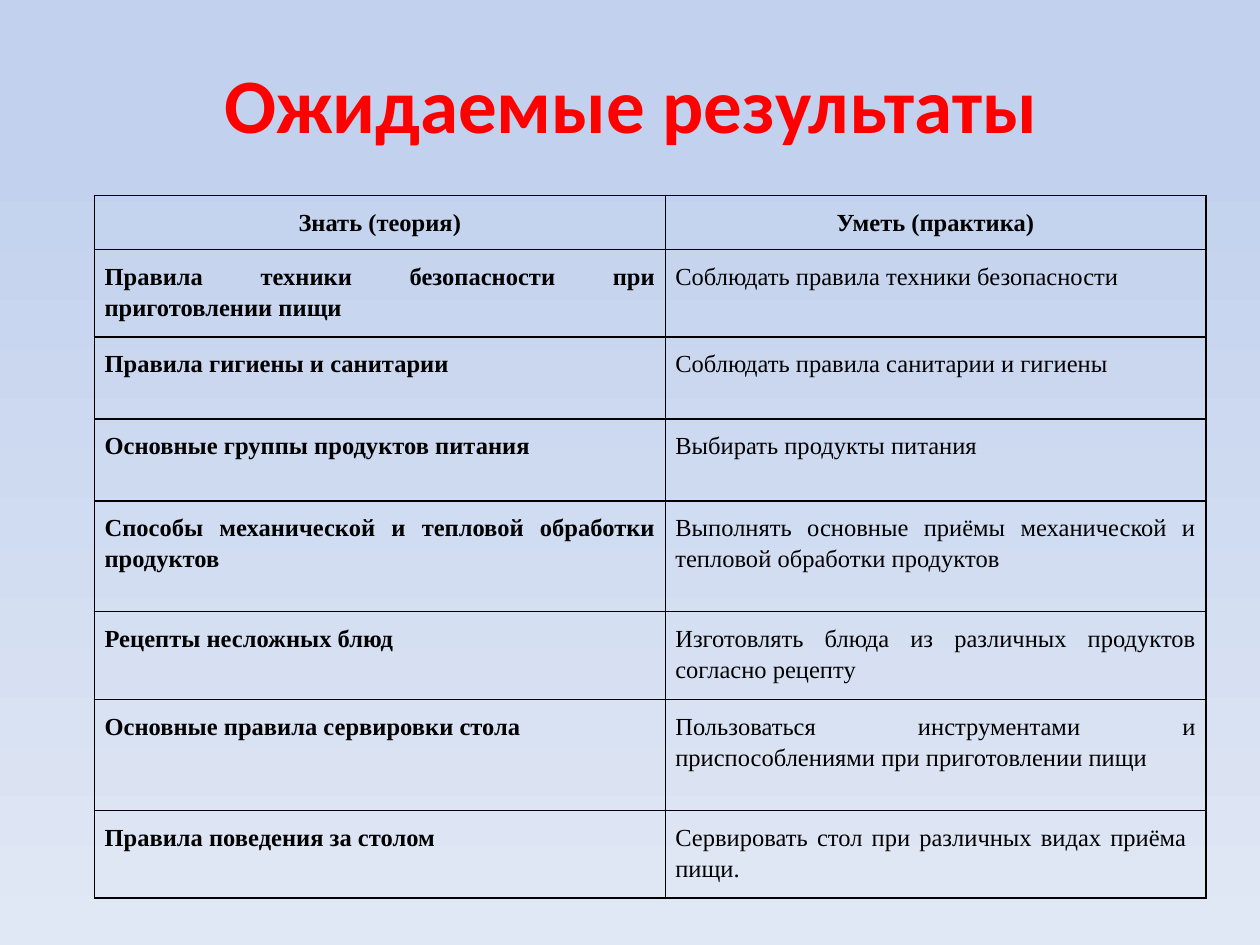
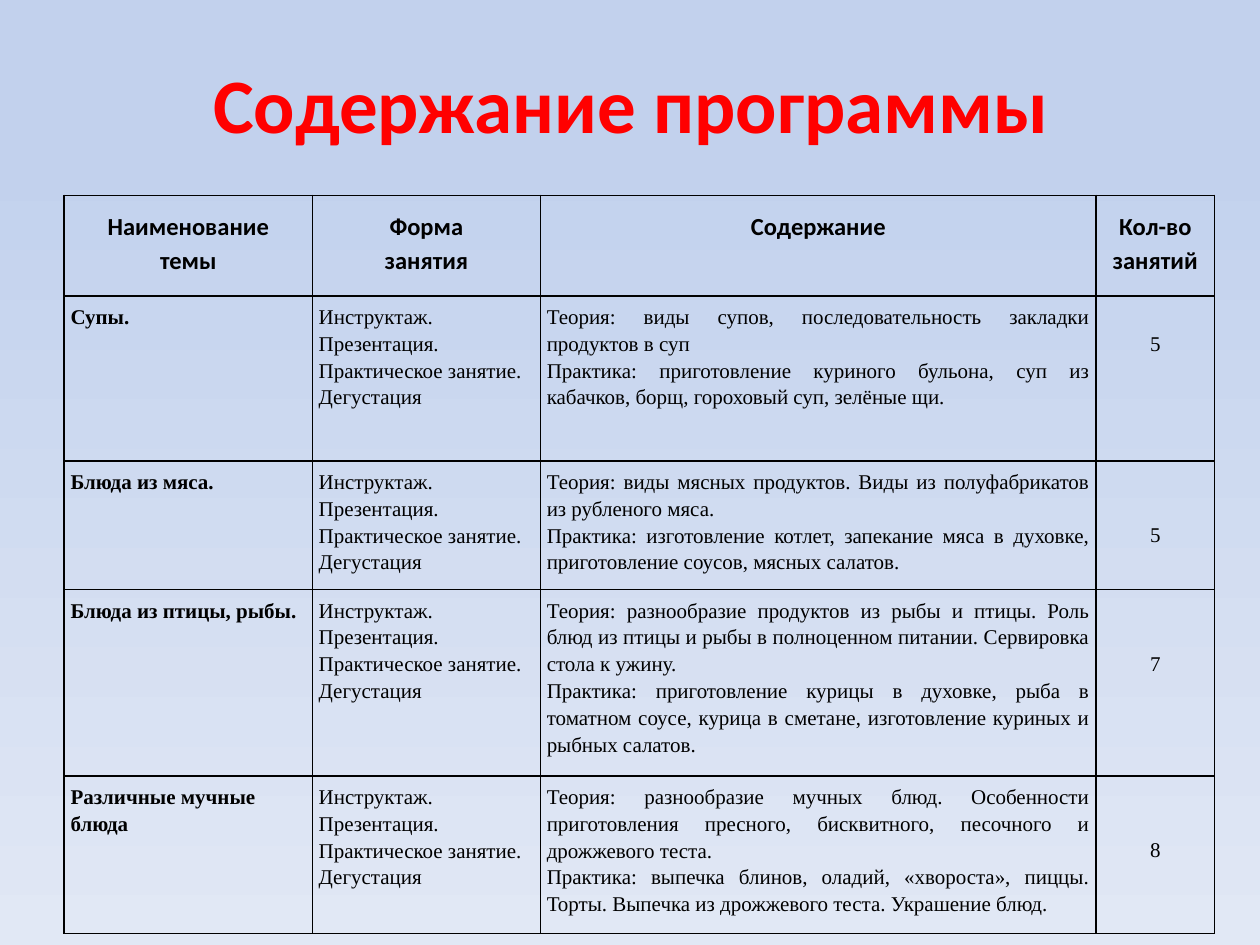
"""Builds two slides on a cooking course: expected results and the programme."""
from lxml.etree import SubElement
from pptx import Presentation
from pptx.dml.color import RGBColor
from pptx.enum.text import MSO_ANCHOR, PP_ALIGN
from pptx.oxml.ns import qn
from pptx.util import Emu, Inches, Pt

WIDE, HIGH = 10, 7.5
SANS, SERIF = "Calibri", "Times New Roman"
RED, BLACK = "FF0000", "000000"
SKY = [("C2D1ED", 0.16), ("E1E8F5", 1)]
ALIGN = {"l": PP_ALIGN.LEFT, "c": PP_ALIGN.CENTER, "j": PP_ALIGN.JUSTIFY}
TOP, LEAD, LINE = 1.55, 1.15, 0.21

SKILLS = [
    ("Знать (теория)", "Уметь (практика)"),
    ("Правила техники безопасности при приготовлении пищи",
     "Соблюдать правила техники безопасности"),
    ("Правила гигиены и санитарии", "Соблюдать правила санитарии и гигиены"),
    ("Основные группы продуктов питания", "Выбирать продукты питания"),
    ("Способы механической и тепловой обработки продуктов",
     "Выполнять основные приёмы механической и тепловой обработки продуктов"),
    ("Рецепты несложных блюд",
     "Изготовлять блюда из различных продуктов согласно рецепту"),
    ("Основные правила сервировки стола",
     "Пользоваться инструментами и приспособлениями при приготовлении пищи"),
    ("Правила поведения за столом",
     "Сервировать стол при различных видах приёма  пищи."),
]
HEADS = ["Наименование темы", "Форма\nзанятия", "Содержание", "Кол-во занятий"]
FORM = "Инструктаж. Презентация. Практическое занятие. Дегустация"
TOPICS = [
    ("Супы.",
     "Теория: виды супов, последовательность закладки продуктов в суп\n"
     "Практика: приготовление куриного бульона, суп из кабачков, борщ, "
     "гороховый суп, зелёные щи.", "5"),
    ("Блюда из мяса.",
     "Теория: виды мясных продуктов. Виды из полуфабрикатов из рубленого мяса.\n"
     "Практика: изготовление котлет, запекание мяса в духовке, "
     "приготовление соусов, мясных салатов.", "5"),
    ("Блюда из птицы, рыбы.",
     "Теория: разнообразие продуктов из рыбы и птицы. Роль блюд из птицы и "
     "рыбы в полноценном питании. Сервировка стола к ужину.\n"
     "Практика: приготовление курицы в духовке, рыба в томатном соусе, "
     "курица в сметане, изготовление куриных и рыбных салатов.", "7"),
    ("Различные мучные блюда",
     "Теория: разнообразие мучных блюд. Особенности приготовления пресного, "
     "бисквитного, песочного и дрожжевого теста.\n"
     "Практика: выпечка блинов, оладий, «хвороста», пиццы. Торты. "
     "Выпечка из дрожжевого теста. Украшение блюд.", "8"),
]
DROPS = [1, 2, 2, 2]
SKILL_COLS, TOPIC_COLS = [4.53, 4.29], [1.97, 1.81, 4.41, 0.94]
SKILL_ROWS = [0.42, 0.65, 0.65, 0.65, 0.88, 0.65, 0.88, 0.65]
TOPIC_ROWS = [1.31, 0.95, 1.38, 1.17]


def paint(code):
    return RGBColor.from_string(code)


def write(frame, text, size=14, font=SERIF, color=BLACK, bold=False,
          align="l", lead=LEAD):
    frame.word_wrap = True
    for i, line in enumerate(text.split("\n")):
        para = frame.add_paragraph() if i else frame.paragraphs[0]
        para.alignment, para.line_spacing = ALIGN[align], lead
        run = para.add_run()
        run.text = line
        face = run.font
        face.size, face.name, face.bold = Pt(size), font, bold
        face.color.rgb = paint(color)


def edge(cell, sides):
    props = cell._tc.get_or_add_tcPr()
    for i, side in enumerate("LRTB"):
        line = SubElement(props, qn("a:ln" + side), w=str(Pt(1)))
        if side in sides:
            fill = SubElement(line, qn("a:solidFill"))
            SubElement(fill, qn("a:srgbClr"), val=BLACK)
        else:
            SubElement(line, qn("a:noFill"))
        props.insert(i, line)


def grid(slide, left, top, cols, rows, data, style, pad, sides="LRTB"):
    table = slide.shapes.add_table(
        len(rows), len(cols), Inches(left), Inches(top),
        Inches(sum(cols)), Inches(sum(rows))).table
    table.first_row = table.horz_banding = False
    for col, width in zip(table.columns, cols):
        col.width = Inches(width)
    for r, (row, tall) in enumerate(zip(data, rows)):
        table.rows[r].height = Inches(tall)
        for c, text in enumerate(row):
            cell = table.cell(r, c)
            form = style(r, c)
            drop = form.pop("drop", 0)
            cell.margin_left = cell.margin_right = Inches(pad)
            cell.margin_top = Inches(pad + drop * LINE)
            cell.margin_bottom = Inches(pad)
            cell.fill.background()
            edge(cell, sides)
            write(cell.text_frame, text, **form)


def page(deck, title):
    slide = deck.slides.add_slide(deck.slide_layouts[6])
    fill = slide.background.fill
    fill.gradient()
    fill.gradient_angle = 270
    for stop, (code, place) in zip(fill.gradient_stops, SKY):
        stop.color.rgb, stop.position = paint(code), place
    box = slide.shapes.add_textbox(
        Inches(0.51), Inches(0.25), Inches(0.9 * WIDE), Inches(0.15 * HIGH))
    box.text_frame.vertical_anchor = MSO_ANCHOR.MIDDLE
    write(box.text_frame, title, size=44, font=SANS, color=RED, bold=True,
          align="c", lead=1.0)
    return slide


def skill(r, c):
    return dict(bold=r == 0 or c == 0, align="j" if r else "c")


def head(r, c):
    return dict(font=SANS, bold=True, align="c")


def topic(r, c):
    return dict(size=12, bold=c == 0, align="lljc"[c],
                drop=DROPS[r] if c == 3 else 0)


def main():
    deck = Presentation()
    deck.slide_width, deck.slide_height = Inches(WIDE), Inches(HIGH)
    slide = page(deck, "Ожидаемые результаты")
    grid(slide, 0.75, TOP, SKILL_COLS, SKILL_ROWS, SKILLS, skill, 0.08)
    slide = page(deck, "Содержание программы")
    grid(slide, 0.51, TOP, TOPIC_COLS, [0.9], [HEADS], head, 0.1, "LRT")
    body = [(name, FORM, text, count) for name, text, count in TOPICS]
    grid(slide, 0.51, TOP + 0.8, TOPIC_COLS, TOPIC_ROWS, body, topic, 0.05)
    deck.save("out.pptx")


if __name__ == "__main__":
    main()
